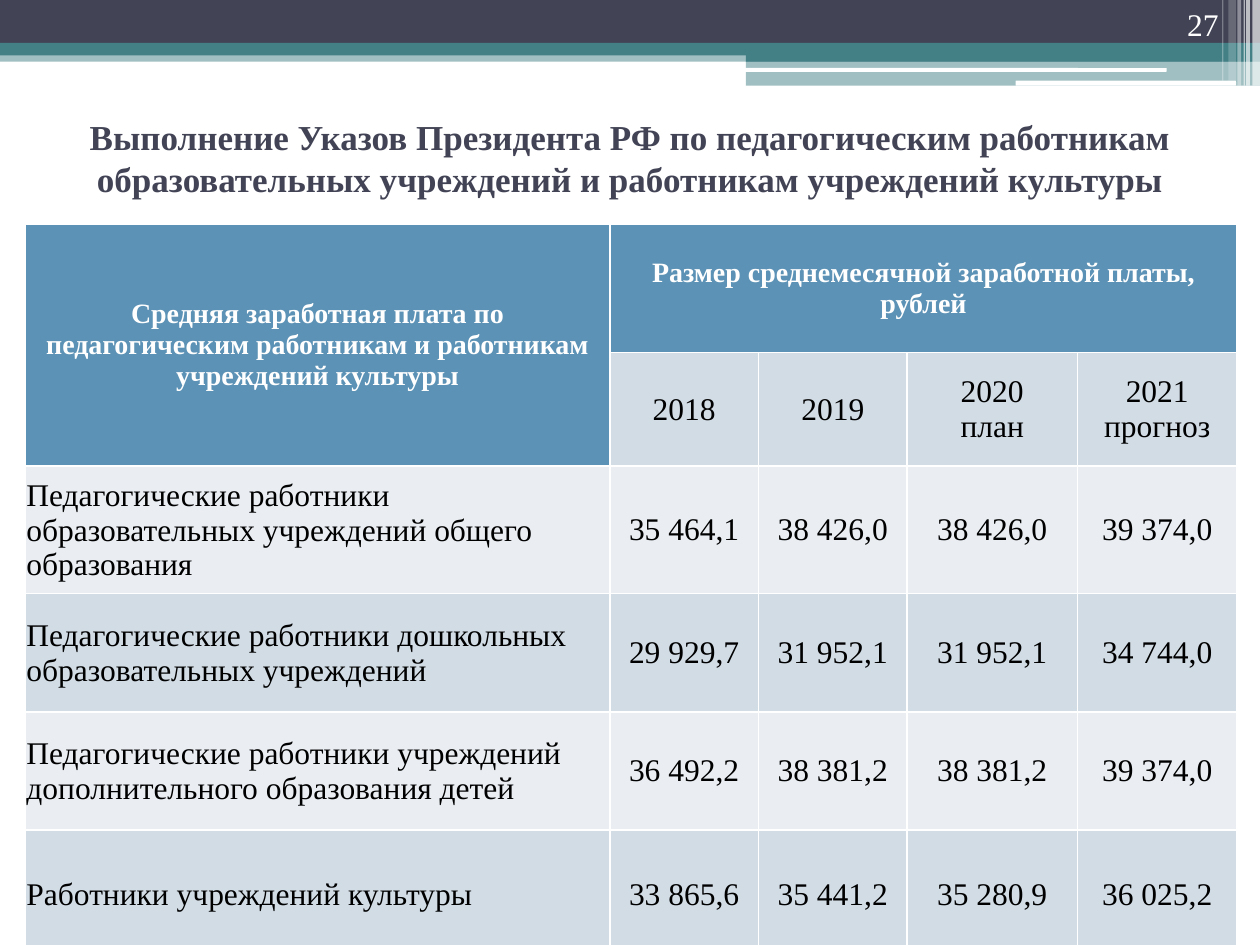
"""Builds the slide on average pay of teaching and culture workers."""
from typing import NamedTuple

from lxml import etree
from pptx import Presentation
from pptx.dml.color import RGBColor
from pptx.enum.shapes import MSO_SHAPE
from pptx.enum.text import MSO_ANCHOR, PP_ALIGN
from pptx.oxml.ns import qn
from pptx.util import Inches, Pt

RECTANGLE, ROUNDED = MSO_SHAPE.RECTANGLE, MSO_SHAPE.ROUNDED_RECTANGLE
MIDDLE, BOTTOM = MSO_ANCHOR.MIDDLE, MSO_ANCHOR.BOTTOM
LEFT, CENTER, RIGHT = PP_ALIGN.LEFT, PP_ALIGN.CENTER, PP_ALIGN.RIGHT
FONT = "Times New Roman"
NAVY, TEAL, WHITE, BLACK = "424456", "438086", "FFFFFF", "000000"
HEADER, DARK_BAND, LIGHT_BAND = "5C92B5", "D2DCE5", "EAEEF3"


class Bar(NamedTuple):
    """One decorative bar, in inches, with opacity in percent."""
    left: float
    top: float
    width: float
    height: float
    color: str
    opacity: int = 100
    kind: int = RECTANGLE


class CellStyle(NamedTuple):
    """Look of a group of table cells, insets in inches."""
    fill: str
    color: str
    size: int
    bold: bool
    align: int
    insets: tuple[float, float, float, float]


BARS = [
    Bar(0, 0.4, 10, 0.09, TEAL, 50),
    Bar(0, 0, 10, 0.34, NAVY),
    Bar(0, 0.34, 10, 0.1, TEAL),
    Bar(5.92, 0.39, 4.08, 0.1, TEAL),
    Bar(5.92, 0.48, 4.08, 0.2, TEAL, 50),
    Bar(5.91, 0.54, 3.35, 0.03, WHITE, kind=ROUNDED),
    Bar(8.06, 0.64, 1.75, 0.04, WHITE, kind=ROUNDED),
    Bar(9.94, 0, 0.06, 0.68, WHITE, 65),
    Bar(9.89, 0, 0.03, 0.68, WHITE, 65),
    Bar(9.87, 0, 0.01, 0.68, WHITE, 60),
    Bar(9.82, 0, 0.03, 0.68, WHITE, 40),
    Bar(9.75, 0, 0.06, 0.64, WHITE, 20),
    Bar(9.7, 0, 0.01, 0.64, WHITE, 30),
]
COLUMNS = [4.64, 1.18, 1.18, 1.35, 1.27]
ROWS = [1.02, 0.84, 1.01, 0.94, 0.94, 1.02]
TITLE = ("Выполнение Указов Президента РФ по педагогическим работникам "
         "образовательных учреждений и работникам учреждений культуры")
CELLS = [
    ["Средняя заработная плата по педагогическим работникам и работникам учреждений культуры",
     "Размер среднемесячной заработной платы, рублей", "", "", ""],
    ["", "2018", "2019", "2020\nплан", "2021\nпрогноз"],
    ["Педагогические работники образовательных учреждений общего образования",
     "35 464,1", "38 426,0", "38 426,0", "39 374,0"],
    ["Педагогические работники дошкольных образовательных учреждений",
     "29 929,7", "31 952,1", "31 952,1", "34 744,0"],
    ["Педагогические работники учреждений дополнительного образования детей",
     "36 492,2", "38 381,2", "38 381,2", "39 374,0"],
    ["Работники учреждений культуры",
     "33 865,6", "35 441,2", "35 280,9", "36 025,2"],
]


def paint(fill, color: str) -> None:
    """Give a fill one solid colour."""
    fill.solid()
    fill.fore_color.rgb = RGBColor.from_string(color)


def write(frame, text: str, *, size: int, color: str, bold: bool = False,
          align: int = CENTER) -> None:
    """Fill a text frame, one paragraph for each line of text."""
    frame.word_wrap = True
    frame.text = text
    for para in frame.paragraphs:
        para.alignment = align
        for font in [para.font] + [span.font for span in para.runs]:
            font.name, font.size, font.bold = FONT, Pt(size), bold
            font.color.rgb = RGBColor.from_string(color)


def add_bar(page, bar: Bar) -> None:
    """Draw a decorative bar."""
    shape = page.shapes.add_shape(bar.kind, *map(Inches, bar[:4]))
    shape.shadow.inherit = False
    shape.line.fill.background()
    paint(shape.fill, bar.color)
    if bar.opacity < 100:
        color = shape.fill._xPr.find(".//" + qn("a:srgbClr"))
        etree.SubElement(color, qn("a:alpha"), val=str(bar.opacity * 1000))


def add_text(page, place: tuple[float, float, float, float], text: str, *,
             anchor: int, **style) -> None:
    """Add a text box with the given anchor and text format."""
    box = page.shapes.add_textbox(*map(Inches, place))
    box.text_frame.vertical_anchor = anchor
    write(box.text_frame, text, **style)


def cell_style(row: int, column: int) -> CellStyle:
    """Choose the style of a cell from its place in the table."""
    if row == 0 or (row == 1 and column == 0):
        return CellStyle(HEADER, WHITE, 16, True, CENTER, (0.1, 0.05, 0.1, 0.05))
    band = DARK_BAND if row % 2 else LIGHT_BAND
    if column == 0:
        return CellStyle(band, BLACK, 18, False, LEFT, (0.01, 0.01, 0.01, 0))
    return CellStyle(band, BLACK, 18, False, CENTER, (0.02,) * 4)


def add_borders(cell, color: str, width: float) -> None:
    """Draw the four borders of a cell."""
    properties = cell._tc.get_or_add_tcPr()
    for side in ("lnL", "lnR", "lnT", "lnB"):
        line = etree.SubElement(properties, qn("a:" + side), w=str(Pt(width)))
        fill = etree.SubElement(line, qn("a:solidFill"))
        etree.SubElement(fill, qn("a:srgbClr"), val=color)


def fill_cell(cell, text: str, style: CellStyle) -> None:
    """Format one table cell and write its text."""
    (cell.margin_left, cell.margin_top,
     cell.margin_right, cell.margin_bottom) = map(Inches, style.insets)
    cell.vertical_anchor = MIDDLE
    add_borders(cell, WHITE, 1)
    paint(cell.fill, style.fill)
    write(cell.text_frame, text, size=style.size, color=style.color,
          bold=style.bold, align=style.align)


def add_pay_table(page) -> None:
    """Add the table of average monthly pay."""
    place = (0.2, 1.78, sum(COLUMNS), sum(ROWS))
    table = page.shapes.add_table(len(ROWS), len(COLUMNS), *map(Inches, place)).table
    for column, width in zip(table.columns, COLUMNS):
        column.width = Inches(width)
    for row, height in zip(table.rows, ROWS):
        row.height = Inches(height)
    for row, texts in enumerate(CELLS):
        for column, text in enumerate(texts):
            fill_cell(table.cell(row, column), text, cell_style(row, column))
    table.cell(0, 0).merge(table.cell(1, 0))
    table.cell(0, 1).merge(table.cell(0, 4))


def main() -> None:
    """Build and save the deck."""
    deck = Presentation()
    deck.slide_width, deck.slide_height = Inches(10), Inches(7.5)
    page = deck.slides.add_slide(deck.slide_layouts[6])
    paint(page.background.fill, WHITE)
    for bar in BARS:
        add_bar(page, bar)
    add_text(page, (0.5, 0.5, 9, 1.5), TITLE, anchor=MIDDLE,
             size=20, color=NAVY, bold=True)
    add_pay_table(page)
    add_text(page, (7.44, -0.11, 2.33, 0.5), "27", anchor=BOTTOM,
             size=18, color=WHITE, align=RIGHT)
    deck.save("out.pptx")


if __name__ == "__main__":
    main()
